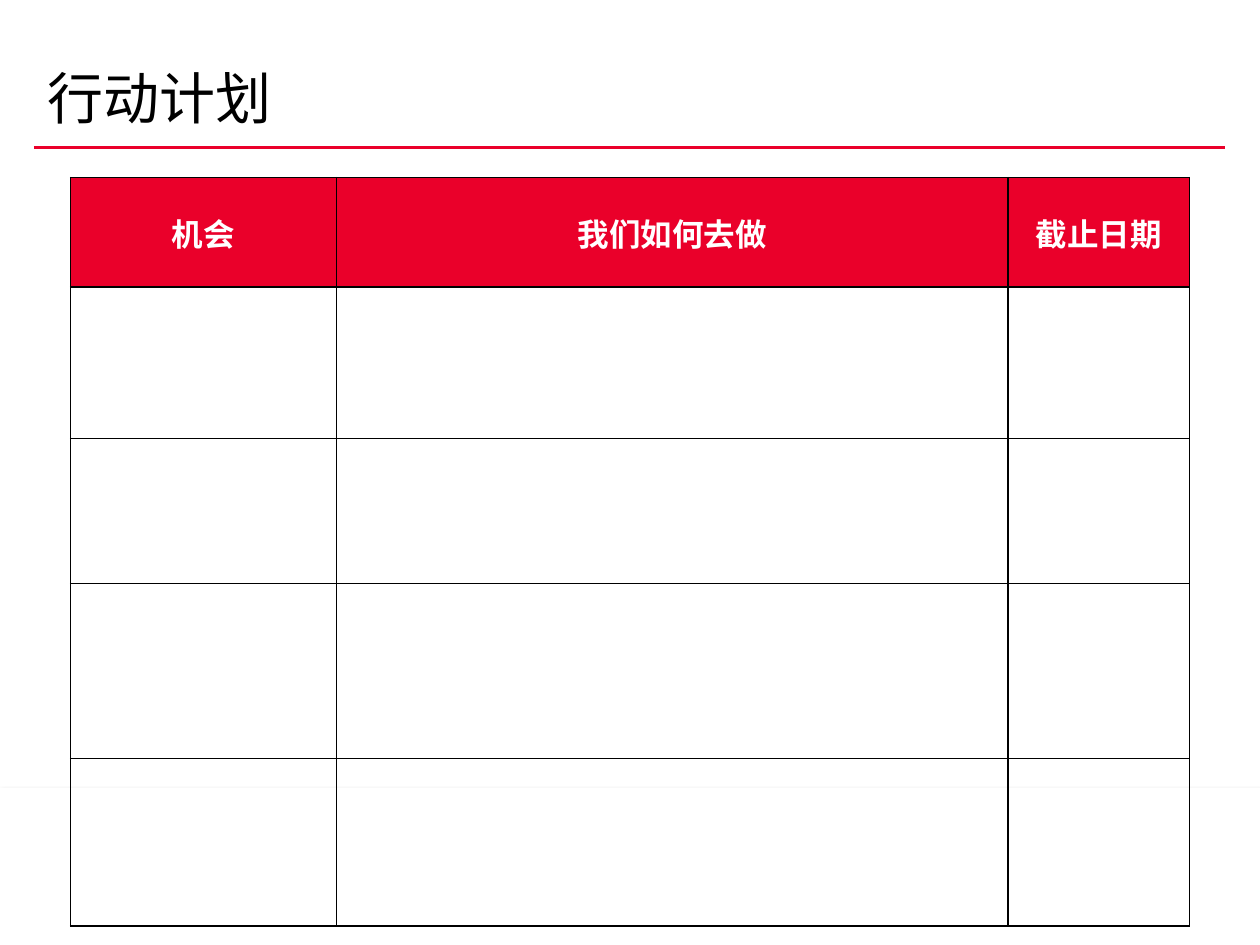
"""Build the action plan slide with its empty planning table."""
from lxml import etree
from pptx import Presentation, util as u
from pptx.dml.color import RGBColor
from pptx.enum import shapes, text
from pptx.oxml import parse_xml
from pptx.oxml.ns import nsdecls, qn

RED = RGBColor(0xEA, 0x00, 0x2A)
WHITE = RGBColor(0xFF, 0xFF, 0xFF)
BLACK = RGBColor(0x00, 0x00, 0x00)
FONT = "Noto Sans CJK SC"
HEADINGS = ["机会", "我们如何去做", "截止日期"]
COLUMNS = [2.11, 5.33, 1.44]
ROWS = [0.87, 1.2, 1.15, 1.39, 1.33]


def add_run(paragraph, words, size, color, bold=False):
    run = paragraph.add_run()
    run.text = words
    run.font.size = u.Pt(size)
    run.font.bold = bold
    run.font.color.rgb = color
    run.font.name = FONT
    etree.SubElement(run.font._element, qn("a:ea"), typeface=FONT)


presentation = Presentation()
presentation.slide_width, presentation.slide_height = u.Inches(10), u.Inches(7.5)
slide = presentation.slides.add_slide(presentation.slide_layouts[6])

band = slide.shapes.add_shape(
    shapes.MSO_SHAPE.RECTANGLE, 0, u.Inches(6.26), u.Inches(10), u.Inches(1.24))
band.fill.solid()
band.fill.fore_color.rgb = WHITE
band.line.color.rgb = WHITE
band.line.width = u.Pt(0.75)
band._element.spPr.append(parse_xml(
    f'<a:effectLst {nsdecls("a")}><a:outerShdw blurRad="{u.Pt(3.1)}" dist="{u.Pt(1.8)}" '
    'dir="5400000" rotWithShape="0"><a:srgbClr val="000000"><a:alpha val="35000"/>'
    '</a:srgbClr></a:outerShdw></a:effectLst>'))

rule = slide.shapes.add_connector(
    shapes.MSO_CONNECTOR.STRAIGHT, u.Inches(0.27), u.Inches(1.17), u.Inches(9.72), u.Inches(1.17))
rule.line.color.rgb = RED
rule.line.width = u.Pt(2)
etree.SubElement(rule._element.spPr, qn("a:effectLst"))

title = slide.shapes.add_textbox(u.Inches(0.28), u.Inches(0.05), u.Inches(9), u.Inches(1.03))
title.text_frame.word_wrap = True
title.text_frame.vertical_anchor = text.MSO_ANCHOR.BOTTOM
paragraph = title.text_frame.paragraphs[0]
paragraph.line_spacing = 0.8
add_run(paragraph, "行动计划", 32, BLACK)

table = slide.shapes.add_table(
    len(ROWS), len(COLUMNS), u.Inches(0.56), u.Inches(1.41),
    u.Inches(sum(COLUMNS)), u.Inches(sum(ROWS))).table
for column, width in zip(table.columns, COLUMNS):
    column.width = u.Inches(width)
for row, height in zip(table.rows, ROWS):
    row.height = u.Inches(height)

for cell in table.iter_cells():
    properties = cell._tc.get_or_add_tcPr()
    for side in ("L", "R", "T", "B"):
        properties.append(parse_xml(
            f'<a:ln{side} {nsdecls("a")} w="{u.Pt(1)}"><a:solidFill>'
            f'<a:srgbClr val="{BLACK}"/></a:solidFill></a:ln{side}>'))
    cell.fill.background()

for cell, heading in zip(table.rows[0].cells, HEADINGS):
    cell.fill.solid()
    cell.fill.fore_color.rgb = RED
    cell.vertical_anchor = text.MSO_ANCHOR.MIDDLE
    paragraph = cell.text_frame.paragraphs[0]
    paragraph.alignment = text.PP_ALIGN.CENTER
    add_run(paragraph, heading, 18, WHITE, bold=True)

presentation.save("out.pptx")
